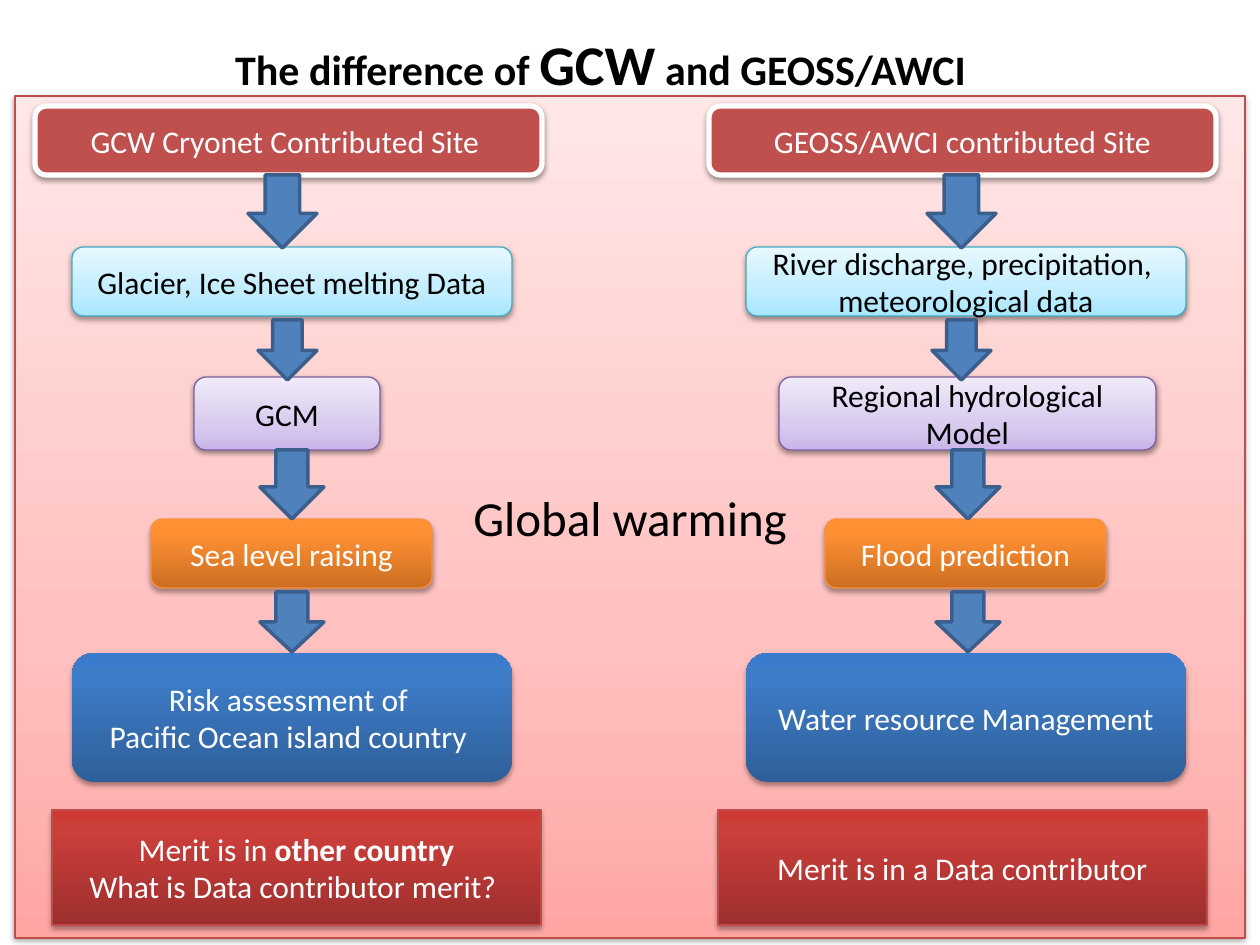
from dataclasses import dataclass
from typing import Optional

from lxml import etree
from pptx import Presentation
from pptx import util as u
from pptx.dml.color import RGBColor
from pptx.enum import shapes, text
from pptx.oxml.ns import qn

PX = 914400 / 126  # EMU in one px
RECT = shapes.MSO_SHAPE.RECTANGLE
ROUND = shapes.MSO_SHAPE.ROUNDED_RECTANGLE
ARROW = shapes.MSO_SHAPE.DOWN_ARROW


@dataclass(frozen=True)
class Style:
    fill: tuple  # one colour, or (position %, colour) stops from the bottom up
    line: Optional[str] = None
    weight: float = 0.75
    ink: str = "FFFFFF"
    shadow: Optional[tuple] = (35, 1.8)  # opacity %, distance pt
    shape: shapes.MSO_SHAPE = ROUND


SOFT = (38, 1.6)


@dataclass(frozen=True)
class Theme:
    font: str = "Calibri"
    black: str = "000000"
    body: int = 18
    panel_size: int = 28
    title: int = 24
    title_big: int = 32
    panel: Style = Style(((0, "FFA6A5"), (35, "FFC0BF"), (100, "FFE7E7")),
                         "BF4C48", ink="000000", shadow=SOFT, shape=RECT)
    site: Style = Style(("C0504D",), "FFFFFF", 3, shadow=SOFT)
    data: Style = Style(((0, "A7E6FF"), (35, "C1EDFF"), (100, "E7F8FF")),
                        "46AAC5", ink="000000", shadow=SOFT)
    model: Style = Style(((0, "C9B5E8"), (35, "D8CBEE"), (100, "F0EAF9")),
                         "7D60A0", ink="000000", shadow=SOFT)
    result: Style = Style(((0, "CC6E20"), (80, "FF9034"), (100, "FF9136")), "F69240")
    use: Style = Style(((0, "2F5F99"), (80, "3D7CC7"), (100, "3A7CCB")))
    merit: Style = Style(((0, "9C2F2D"), (80, "CB3E3A"), (100, "CE3B37")),
                         "BF4C48", shape=RECT)
    arrow: Style = Style(("4F81BD",), "3A5F8C", 2, shadow=None, shape=ARROW)


@dataclass(frozen=True)
class Side:
    left: int
    width: int
    words: str  # one paragraph a line, *bold* between stars


@dataclass(frozen=True)
class Row:
    style: Style
    top: int
    height: int
    sides: tuple


T = Theme()
ROWS = (
    Row(T.site, 106, 69, (Side(35, 507, "GCW Cryonet Contributed Site "),
                          Side(709, 507, "GEOSS/AWCI contributed Site"))),
    Row(T.data, 247, 69, (Side(72, 440, "Glacier, Ice Sheet melting Data"),
                          Side(746, 440, "River discharge, precipitation, \nmeteorological data"))),
    Row(T.model, 377, 73, (Side(194, 186, "GCM"),
                           Side(779, 377, "Regional hydrological Model"))),
    Row(T.result, 519, 69, (Side(151, 281, "Sea level raising"),
                            Side(825, 281, "Flood prediction"))),
    Row(T.use, 653, 129, (Side(72, 440, "Risk assessment of \nPacific Ocean island country "),
                          Side(746, 440, "Water resource Management"))),
    Row(T.merit, 810, 115, (Side(52, 489, "Merit is in *other country*\nWhat is Data contributor merit? "),
                            Side(718, 489, "Merit is in a Data contributor"))),
)
# top, width, height, then the left edge in each column
ARROWS = (
    (175, 69, 73, (248, 927)),
    (320, 59, 60, (258, 932)),
    (450, 64, 69, (260, 936)),
    (592, 64, 60, (260, 936)),
)


def px(n: int) -> int:
    return round(n * PX)


def add_color(parent, color: str, alpha: int = 100) -> None:
    clr = etree.SubElement(parent, qn("a:srgbClr"), val=color)
    if alpha < 100:
        etree.SubElement(clr, qn("a:alpha"), val=str(alpha * 1000))


def paint(sp, style: Style) -> None:
    """Fill, outline and shadow of one shape."""
    if len(style.fill) == 1:
        sp.fill.solid()
        sp.fill.fore_color.rgb = RGBColor.from_string(style.fill[0])
    else:
        sp.fill.gradient()
        sp.fill.gradient_angle = 90
        stops = sp._element.spPr.find(".//" + qn("a:gsLst"))
        for old in list(stops):
            stops.remove(old)
        for pos, color in style.fill:
            add_color(etree.SubElement(stops, qn("a:gs"), pos=str(pos * 1000)), color)
    if style.line:
        sp.line.color.rgb = RGBColor.from_string(style.line)
        sp.line.width = u.Pt(style.weight)
    else:
        sp.line.fill.background()
    sp.shadow.inherit = False
    if style.shadow:
        alpha, dist = style.shadow
        effects = sp._element.spPr.find(qn("a:effectLst"))
        outer = etree.SubElement(effects, qn("a:outerShdw"), blurRad=str(u.Pt(3.1)),
                                 dist=str(u.Pt(dist)), dir="5400000", rotWithShape="0")
        add_color(outer, T.black, alpha)


def add_run(p, words: str, size: int, color: str, bold: bool) -> None:
    r = p.add_run()
    r.text = words
    r.font.name = T.font
    r.font.size = u.Pt(size)
    r.font.bold = bold
    r.font.color.rgb = RGBColor.from_string(color)


def add_box(s, style: Style, left: int, top: int, width: int, height: int,
            words: str = "", size: int = T.body) -> None:
    sp = s.shapes.add_shape(style.shape, px(left), px(top), px(width), px(height))
    paint(sp, style)
    if not words:
        return
    tf = sp.text_frame
    tf.word_wrap = True
    tf.vertical_anchor = text.MSO_ANCHOR.MIDDLE
    for i, line in enumerate(words.split("\n")):
        p = tf.add_paragraph() if i else tf.paragraphs[0]
        p.alignment = text.PP_ALIGN.CENTER
        for j, part in enumerate(line.split("*")):
            if part:
                add_run(p, part, size, style.ink, bold=j % 2 == 1)


def add_title(s) -> None:
    sp = s.shapes.title
    sp.left, sp.top, sp.width, sp.height = px(35), px(23), px(1131), px(81)
    tf = sp.text_frame
    tf.word_wrap = True
    tf.auto_size = text.MSO_AUTO_SIZE.NONE
    tf.vertical_anchor = text.MSO_ANCHOR.TOP
    p = tf.paragraphs[0]
    p.alignment = text.PP_ALIGN.CENTER
    for words, size in (("The difference of ", T.title), ("GCW", T.title_big),
                        (" and GEOSS/AWCI", T.title)):
        add_run(p, words, size, T.black, bold=True)


def main() -> None:
    prs = Presentation()
    prs.slide_width, prs.slide_height = u.Inches(10), u.Inches(7.5)
    s = prs.slides.add_slide(prs.slide_layouts[5])
    add_title(s)
    # Background panel
    add_box(s, T.panel, 15, 96, 1230, 842, "Global warming", T.panel_size)
    # Two columns of steps
    for row in ROWS:
        for side in row.sides:
            add_box(s, row.style, side.left, row.top, side.width, row.height, side.words)
    # Arrows between the steps
    for top, width, height, lefts in ARROWS:
        for left in lefts:
            add_box(s, T.arrow, left, top, width, height)
    prs.save("out.pptx")


if __name__ == "__main__":
    main()
